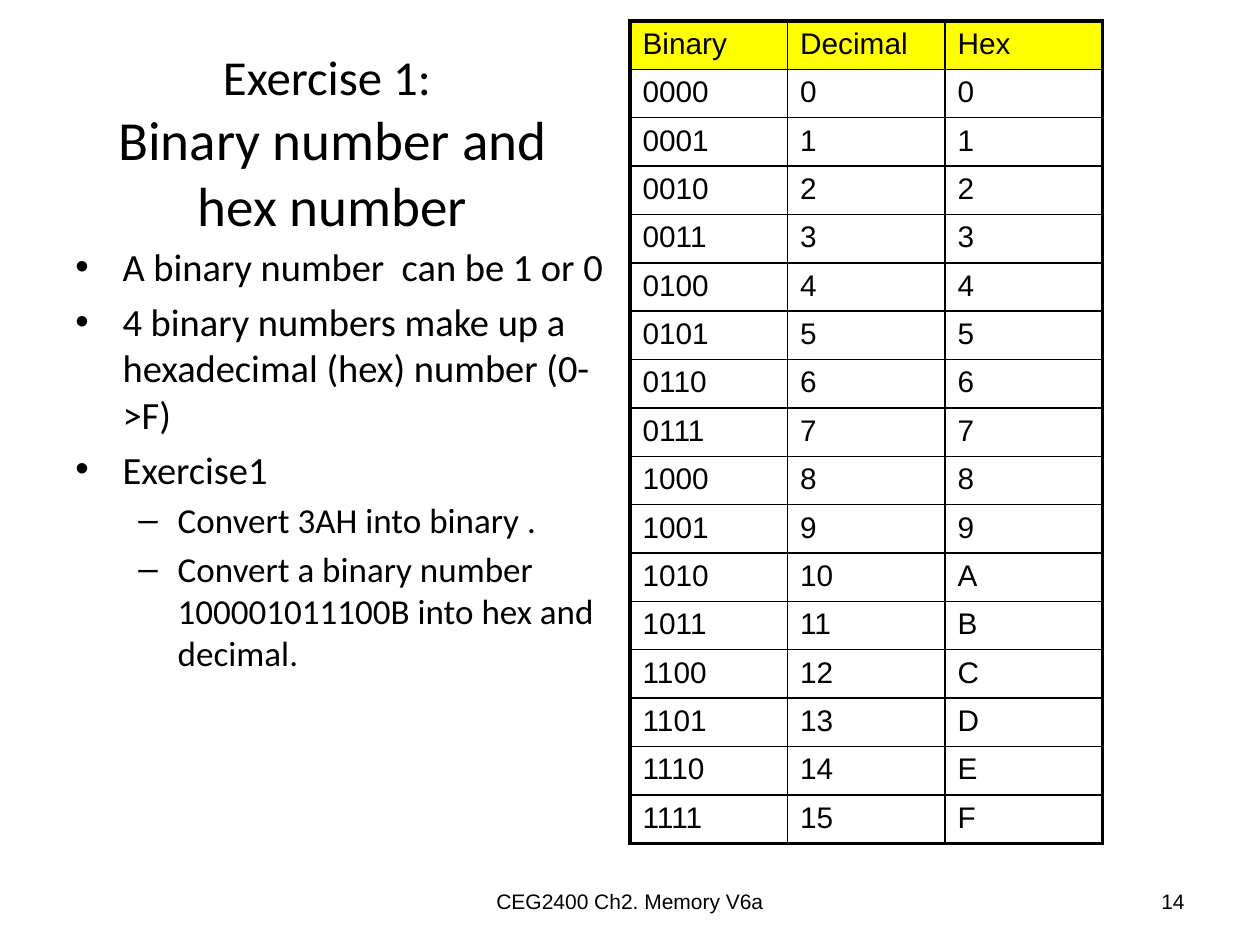
from dataclasses import dataclass

from lxml import etree
from pptx import Presentation
from pptx.dml.color import RGBColor
from pptx.enum import text
from pptx.oxml import ns
from pptx.util import Pt


@dataclass(frozen=True)
class Theme:
    ink: str = "000000"
    header: str = "FFFF00"
    body_font: str = "Calibri"
    table_font: str = "Arial"
    title_lead: float = 27.9
    title_main: float = 31.5
    point: float = 22
    subpoint: float = 20
    cell: float = 17
    footer: float = 12
    thin: float = 1
    thick: float = 2.25


THEME = Theme()


def add_run(paragraph, words, font, size):
    run = paragraph.add_run()
    run.text = words
    run.font.name = font
    run.font.size = Pt(size)
    run.font.color.rgb = RGBColor.from_string(THEME.ink)


def add_frame(slide, left, top, width, height, anchor=text.MSO_ANCHOR.TOP):
    frame = slide.shapes.add_textbox(Pt(left), Pt(top), Pt(width), Pt(height)).text_frame
    frame.word_wrap = True
    frame.vertical_anchor = anchor
    return frame


def add_title(slide, lead, main_title):
    frame = add_frame(slide, 36, 30, 308, 102.5, text.MSO_ANCHOR.MIDDLE)
    heading = frame.paragraphs[0]
    heading.alignment = text.PP_ALIGN.CENTER
    add_run(heading, lead, THEME.body_font, THEME.title_lead)
    heading.add_line_break()
    add_run(heading, main_title, THEME.body_font, THEME.title_main)


def set_bullet(paragraph, mark, margin, hang):
    props = paragraph._p.get_or_add_pPr()
    props.set("marL", str(Pt(margin)))
    props.set("indent", str(Pt(-hang)))
    etree.SubElement(props, ns.qn("a:buFont")).set("typeface", THEME.table_font)
    etree.SubElement(props, ns.qn("a:buChar")).set("char", mark)


def add_points(slide, points):
    levels = [("•", 27, 27, THEME.point, 5), ("–", 58.5, 22.5, THEME.subpoint, 4)]
    frame = add_frame(slide, 36, 135.5, 318, 347)
    for index, (level, words) in enumerate(points):
        mark, margin, hang, size, gap = levels[level]
        point = frame.add_paragraph() if index else frame.paragraphs[0]
        point.level = level
        point.space_before = Pt(gap)
        set_bullet(point, mark, margin, hang)
        add_run(point, words, THEME.body_font, size)


def add_border(cell, side, width):
    line = etree.SubElement(cell._tc.get_or_add_tcPr(), ns.qn(f"a:ln{side}"), w=str(Pt(width)))
    fill = etree.SubElement(line, ns.qn("a:solidFill"))
    etree.SubElement(fill, ns.qn("a:srgbClr"), val=THEME.ink)


def add_number_table(slide, rows):
    row_count, column_count = len(rows), len(rows[0])
    row_height, column_width = 27.6, 90
    table = slide.shapes.add_table(
        row_count, column_count, Pt(360), Pt(12),
        Pt(column_width * column_count), Pt(row_height * row_count),
    ).table
    table.first_row = table.horz_banding = False
    for row in table.rows:
        row.height = Pt(row_height)
    for r, values in enumerate(rows):
        for c, value in enumerate(values):
            cell = table.cell(r, c)
            outer = {"L": c == 0, "R": c == column_count - 1,
                     "T": r == 0, "B": r == row_count - 1}
            for side, is_outer in outer.items():
                add_border(cell, side, THEME.thick if is_outer else THEME.thin)
            if r == 0:
                cell.fill.solid()
                cell.fill.fore_color.rgb = RGBColor.from_string(THEME.header)
            else:
                cell.fill.background()
            add_run(cell.text_frame.paragraphs[0], value, THEME.table_font, THEME.cell)


def add_footer(slide, words, left, width, alignment):
    frame = add_frame(slide, left, 500.5, width, 28.75, text.MSO_ANCHOR.MIDDLE)
    frame.paragraphs[0].alignment = alignment
    add_run(frame.paragraphs[0], words, THEME.table_font, THEME.footer)


def main():
    deck = Presentation()
    deck.slide_width, deck.slide_height = Pt(720), Pt(540)
    slide = deck.slides.add_slide(deck.slide_layouts[6])
    add_title(slide, "Exercise 1: ", "Binary number and hex number")
    add_points(slide, [
        (0, "A binary number  can be 1 or 0"),
        (0, "4 binary numbers make up a hexadecimal (hex) number (0->F)"),
        (0, "Exercise1"),
        (1, "Convert 3AH into binary ."),
        (1, "Convert a binary number 100001011100B into hex and decimal."),
    ])
    numbers = [(f"{n:04b}", f"{n}", f"{n:X}") for n in range(16)]
    add_number_table(slide, [("Binary", "Decimal", "Hex"), *numbers])
    add_footer(slide, "CEG2400 Ch2. Memory V6a", 246, 228, text.PP_ALIGN.CENTER)
    add_footer(slide, "14", 516, 168, text.PP_ALIGN.RIGHT)
    deck.save("out.pptx")


if __name__ == "__main__":
    main()
